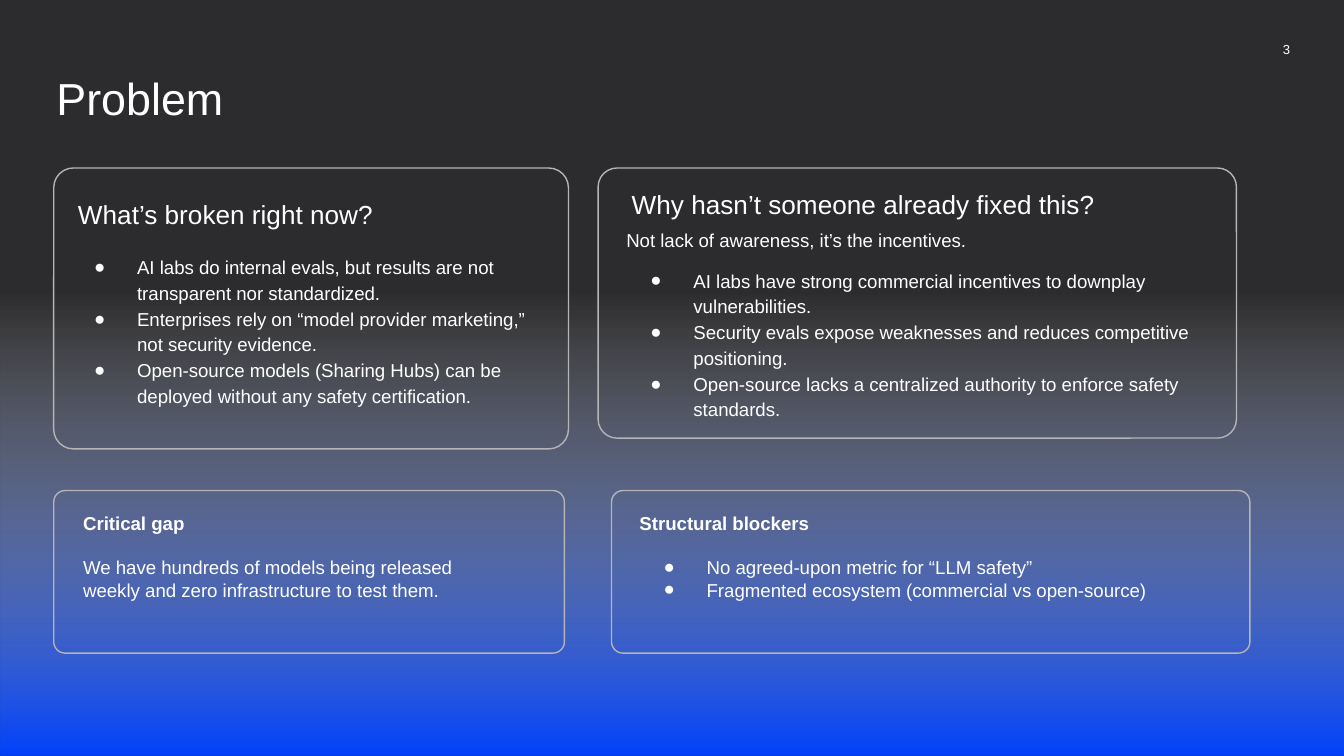
from lxml.etree import SubElement
from pptx import Presentation
from pptx.dml.color import RGBColor
from pptx.enum.shapes import MSO_SHAPE as Shape
from pptx.enum.text import MSO_ANCHOR as Anchor, MSO_AUTO_SIZE as AutoSize, PP_ALIGN as Align
from pptx.oxml import parse_xml
from pptx.oxml.ns import nsdecls, qn
from pptx.util import Inches, Pt

WHITE, BLUE, DARK, GREY = "FFFFFF", "0141FA", "2C2C2E", "B5B5B7"

deck = Presentation()
deck.slide_width, deck.slide_height = Inches(10), Inches(5.625)
column = row = deck.slide_width / 100
page = deck.slides.add_slide(deck.slide_layouts.get_by_name("Comparison"))


def color(target, value):
    if hasattr(target, "solid"):
        target.solid()
        target = target.fore_color
    target.rgb = RGBColor.from_string(value)


def write(box, area, lines, size, insets=(0, 0, 0, 0), anchor=Anchor.TOP,
          spacing=1.15, plain=1, gap=0, align=Align.LEFT):
    left, top, width, height = area
    box.left, box.width = int(left * column), int(width * column)
    box.top, box.height = int(top * row), int(height * row)
    frame = box.text_frame
    frame.text = "\n".join(lines)
    frame.word_wrap, frame.auto_size = True, AutoSize.NONE
    frame.vertical_anchor = anchor
    frame.margin_left, frame.margin_top, frame.margin_right, frame.margin_bottom = map(Inches, insets)
    for index, para in enumerate(frame.paragraphs):
        bulleted = index >= plain
        layout = para._p.get_or_add_pPr()
        layout.set("marL", str(Inches(0.5 if bulleted else 0)))
        layout.set("indent", str(Inches(-0.32 if bulleted else 0)))
        if bulleted:
            tint = SubElement(layout, qn("a:buClr"))
            SubElement(tint, qn("a:srgbClr"), val=WHITE)
            SubElement(layout, qn("a:buFont"), typeface="Arial")
            SubElement(layout, qn("a:buChar"), char="●")
        else:
            SubElement(layout, qn("a:buNone"))
        para.alignment, para.line_spacing = align, spacing
        para.space_before = Pt(gap if index and index == plain else 0)
        para.space_after = Pt(0)
        for span in para.runs:
            span.font.name, span.font.size, span.font.bold = "Arial", Pt(size), False
            color(span.font.color, WHITE)


color(page.background.fill, DARK)

glow = page.shapes.add_shape(Shape.RECTANGLE, 0, int(18.4 * row), deck.slide_width, int(37.85 * row))
glow.shadow.inherit = False
glow.line.fill.background()
glow.fill.background()
clear = f'<a:srgbClr val="{WHITE}"><a:alpha val="0"/></a:srgbClr>'
fade = parse_xml(
    f'<a:gradFill {nsdecls("a")}><a:gsLst>'
    f'<a:gs pos="0"><a:srgbClr val="{BLUE}"/></a:gs>'
    f'<a:gs pos="91000">{clear}</a:gs><a:gs pos="100000">{clear}</a:gs>'
    '</a:gsLst><a:lin ang="16200000" scaled="0"/></a:gradFill>')
properties = glow.element.spPr
properties.replace(properties.find(qn("a:noFill")), fade)
page.shapes.element.insert(2, glow.element)

title, left_heading, left_list, right_heading, right_list = page.placeholders
write(title, (4.2, 5.3, 91.5, 4), ["Problem"], 24, anchor=Anchor.BOTTOM)
write(left_heading, (5.8, 14.4, 33.6, 2.6), ["What’s broken right now?"], 14)
write(right_heading, (47, 13.7, 37.4, 2.6), ["Why hasn’t someone already fixed this?"], 14)
write(left_list, (5.2, 15.3, 36, 18.2), [
    "AI labs do internal evals, but results are not transparent nor standardized.",
    "Enterprises rely on “model provider marketing,” not security evidence.",
    "Open-source models (Sharing Hubs) can be deployed without any safety certification.",
], 10, insets=(0, 0, 0, 0.32), anchor=Anchor.BOTTOM, plain=0)
write(right_list, (46.6, 17.9, 47.1, 14.9), [
    "Not lack of awareness, it’s the incentives.",
    "AI labs have strong commercial incentives to downplay vulnerabilities.",
    "Security evals expose weaknesses and reduces competitive positioning.",
    "Open-source lacks a centralized authority to enforce safety standards.",
], 10, insets=(0, 0, 0, 0.15), anchor=Anchor.BOTTOM, gap=8)

number = page.shapes.add_textbox(0, 0, 0, 0)
write(number, (90, 2.4, 6, 2.6), ["3"], 7, insets=(0, 0.1, 0, 0.1),
      anchor=Anchor.MIDDLE, spacing=1, align=Align.RIGHT)

notes = [
    (5.2, 32.8, 2, ["Critical gap",
                    "We have hundreds of models being released weekly and zero infrastructure to test them."]),
    (46.6, 43.4, 1, ["Structural blockers",
                     "No agreed-upon metric for “LLM safety”",
                     "Fragmented ecosystem (commercial vs open-source)"]),
]
for left, width, plain, lines in notes:
    note = page.shapes.add_textbox(0, 0, 0, 0)
    write(note, (left, 37.1, width, 8.8), lines, 10, insets=(0.1,) * 4, spacing=1, plain=plain)
    heading, following = note.text_frame.paragraphs[:2]
    heading.runs[0].font.bold = True
    following.space_before = Pt(11.5)

for left, top, width, height in [(44.5, 12.5, 47.5, 20.1), (4, 36.5, 38, 12.1),
                                 (4, 12.5, 38.3, 20.9), (45.5, 36.5, 47.5, 12.1)]:
    card = page.shapes.add_shape(Shape.ROUNDED_RECTANGLE, int(left * column), int(top * row),
                                 int(width * column), int(height * row))
    card.adjustments[0] = 0.07
    card.shadow.inherit = False
    card.fill.background()
    card.line.width = Pt(0.75)
    color(card.line.color, GREY)

deck.save("out.pptx")
